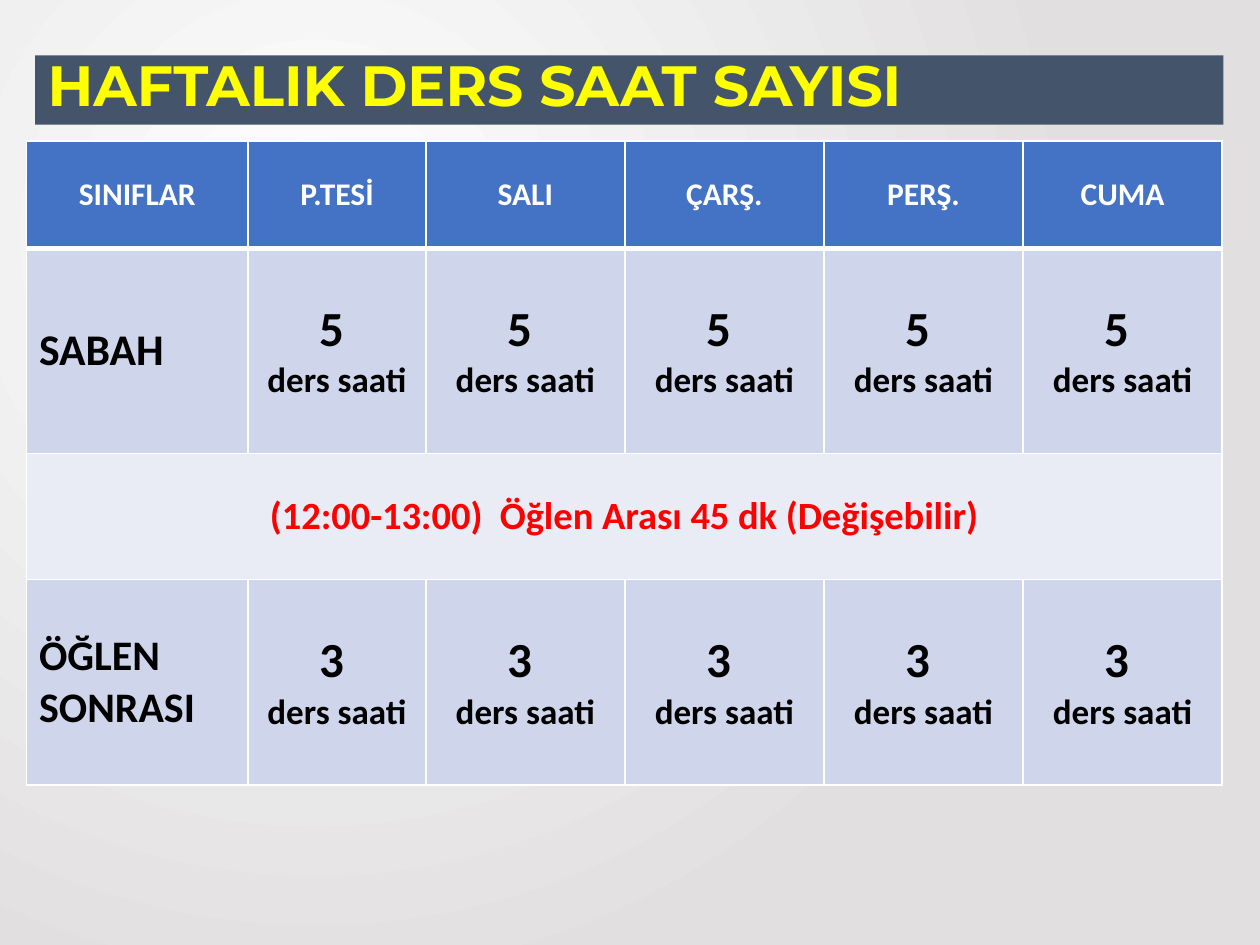
from lxml import etree
from pptx import Presentation
from pptx.dml.color import RGBColor
from pptx.enum.shapes import MSO_SHAPE
from pptx.enum.text import MSO_ANCHOR, PP_ALIGN
from pptx.oxml.ns import qn
from pptx.util import Inches, Pt

RECTANGLE = MSO_SHAPE.RECTANGLE
MIDDLE = MSO_ANCHOR.MIDDLE
LEFT, CENTER = PP_ALIGN.LEFT, PP_ALIGN.CENTER

WHITE = RGBColor(0xFF, 0xFF, 0xFF)
BLACK = RGBColor(0, 0, 0)
RED = RGBColor(0xFF, 0, 0)
YELLOW = RGBColor(0xFF, 0xFF, 0)
SLATE = RGBColor(0x44, 0x54, 0x6A)
BLUE = RGBColor(0x44, 0x72, 0xC4)
BAND = RGBColor(0xCF, 0xD5, 0xEA)
PALE_BAND = RGBColor(0xE9, 0xEB, 0xF5)
WARM_GRAY = RGBColor(0xE1, 0xDF, 0xDF)

HEADINGS = ["SINIFLAR", "P.TESİ", "SALI", "ÇARŞ.", "PERŞ.", "CUMA"]
COLUMN_WIDTHS = [1.76, 1.41] + [1.58] * 4
ROW_HEIGHTS = [0.85, 1.63, 1, 1.63]
# row, label, label size, lessons each day
SESSIONS = [(1, "SABAH", 25, 5), (3, "ÖĞLEN SONRASI", 24, 3)]
BREAK_ROW = 2


def paint_background(slide):
    """Radial gradient, light at the upper left."""
    fill = slide.background.fill
    fill.gradient()
    for stop, color in zip(fill.gradient_stops, (WHITE, WARM_GRAY)):
        stop.color.rgb = color
    for position, stop in enumerate(fill.gradient_stops):
        stop.position = position
    gradient = slide.background._cSld.find(".//" + qn("a:gradFill"))
    linear = gradient.find(qn("a:lin"))
    radial = etree.Element(qn("a:path"), {"path": "circle"})
    etree.SubElement(radial, qn("a:fillToRect"),
                     {"l": "50000", "t": "50000", "r": "100000", "b": "100000"})
    gradient.replace(linear, radial)


def style_paragraph(paragraph, text, size, color, align, font="Calibri"):
    paragraph.text = text
    paragraph.alignment = align
    paragraph.font.name = font
    paragraph.font.size = Pt(size)
    paragraph.font.bold = True
    paragraph.font.color.rgb = color


def add_title(slide):
    bar = slide.shapes.add_shape(RECTANGLE, Inches(0.28), Inches(0.44),
                                 Inches(9.43), Inches(0.55))
    bar.shadow.inherit = False
    bar.fill.solid()
    bar.fill.fore_color.rgb = SLATE
    bar.line.fill.background()
    bar.text_frame.vertical_anchor = MIDDLE
    title = bar.text_frame.paragraphs[0]
    style_paragraph(title, "HAFTALIK DERS SAAT SAYISI", 32.4, YELLOW, LEFT, "Montserrat")
    title.line_spacing = 0.8
    title.space_before = Pt(12)


def set_borders(cell, top=1, bottom=1):
    properties = cell._tc.get_or_add_tcPr()
    for side, width in (("L", 1), ("R", 1), ("T", top), ("B", bottom)):
        line = etree.SubElement(properties, qn(f"a:ln{side}"), {"w": str(Pt(width))})
        solid = etree.SubElement(line, qn("a:solidFill"))
        etree.SubElement(solid, qn("a:srgbClr"), {"val": str(WHITE)})


def fill_cell(cell, lines, color=BLACK, align=CENTER):
    """Write (text, size) lines, one paragraph each."""
    cell.vertical_anchor = MIDDLE
    frame = cell.text_frame
    for index, (text, size) in enumerate(lines):
        paragraph = frame.add_paragraph() if index else frame.paragraphs[0]
        style_paragraph(paragraph, text, size, color, align)


def add_timetable(slide):
    table = slide.shapes.add_table(
        len(ROW_HEIGHTS), len(COLUMN_WIDTHS), Inches(0.21), Inches(1.12),
        Inches(sum(COLUMN_WIDTHS)), Inches(sum(ROW_HEIGHTS))).table
    table.horz_banding = False
    for column, width in zip(table.columns, COLUMN_WIDTHS):
        column.width = Inches(width)
    for row, height in zip(table.rows, ROW_HEIGHTS):
        row.height = Inches(height)

    for row, color in enumerate((BLUE, BAND, PALE_BAND, BAND)):
        for cell in table.rows[row].cells:
            set_borders(cell, top=3 if row == 1 else 1, bottom=3 if row == 0 else 1)
            cell.fill.solid()
            cell.fill.fore_color.rgb = color

    for column, heading in enumerate(HEADINGS):
        fill_cell(table.cell(0, column), [(heading, 18)], WHITE)
    for row, label, size, lessons in SESSIONS:
        fill_cell(table.cell(row, 0), [(label, size)], align=LEFT)
        for column in range(1, len(HEADINGS)):
            fill_cell(table.cell(row, column), [(f"{lessons} ", 28), ("ders saati", 20)])

    lunch = table.cell(BREAK_ROW, 0)
    lunch.merge(table.cell(BREAK_ROW, len(HEADINGS) - 1))
    fill_cell(lunch, [("(12:00-13:00)  Öğlen Arası 45 dk (Değişebilir)", 22)], RED)


def main():
    deck = Presentation()
    deck.slide_width, deck.slide_height = Inches(10), Inches(7.5)
    slide = deck.slides.add_slide(deck.slide_layouts[6])
    paint_background(slide)
    add_timetable(slide)
    add_title(slide)
    deck.save("out.pptx")


if __name__ == "__main__":
    main()
